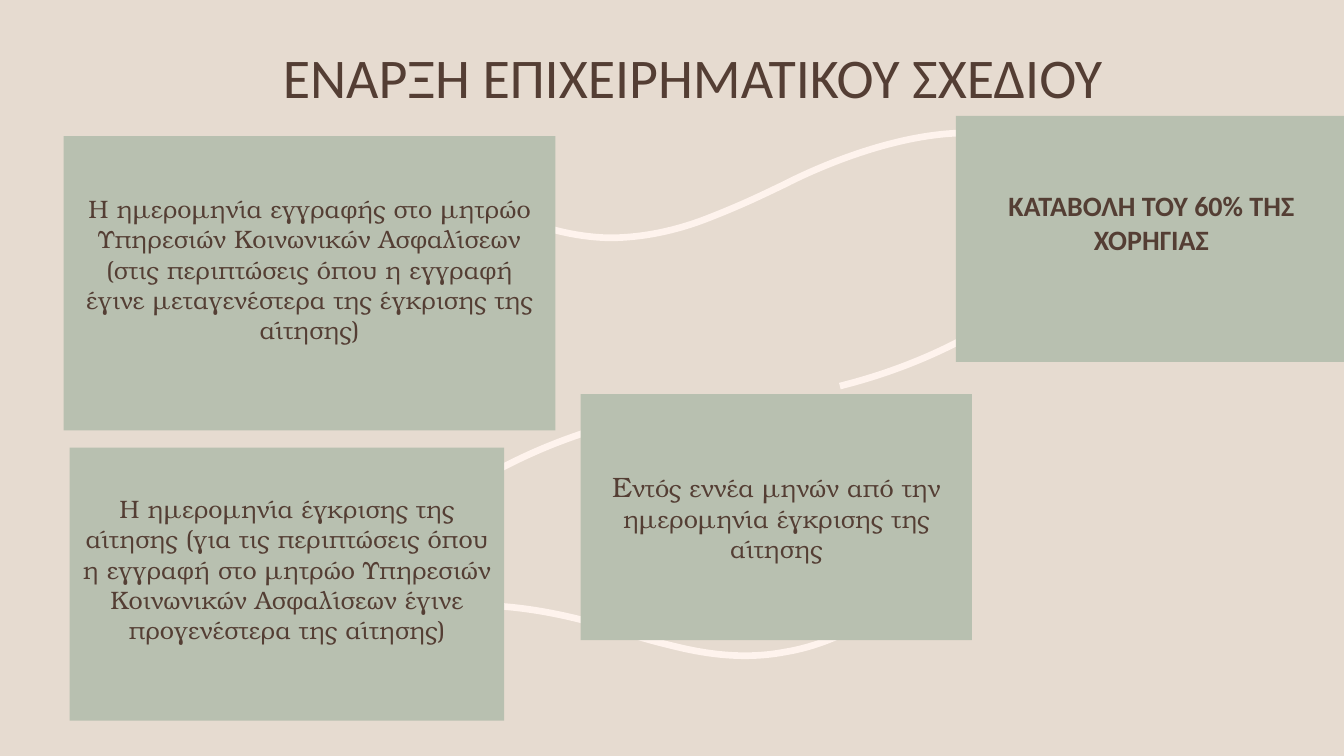
import pptx
import pptx.util
import pptx.dml.color
import pptx.enum.text
import pptx.oxml.ns
from lxml import etree

Inches = pptx.util.Inches
Pt = pptx.util.Pt
RGBColor = pptx.dml.color.RGBColor
ANCHOR = pptx.enum.text.MSO_ANCHOR
ALIGN = pptx.enum.text.PP_ALIGN
qn = pptx.oxml.ns.qn

SAND = RGBColor(0xE6, 0xDB, 0xD0)
SAGE = RGBColor(0xB8, 0xC0, 0xB0)
BROWN = RGBColor(0x54, 0x3E, 0x34)
CREAM = RGBColor(0xFE, 0xF3, 0xED)
SANS = "Calibri"
SERIF = "TeX Gyre Bonum"
COMPARISON_LAYOUT = 4

CURVES = [
    [(8.33, 3.83), (9.13, 3.63), (9.85, 3.27), (10.47, 2.75)],
    [(5.84, 4.28), (5.09, 4.52), (4.45, 4.9), (3.89, 5.39)],
    [(3.07, 2.23), (3.5, 1.87), (3.98, 1.77), (4.49, 1.9),
     (4.66, 1.94), (4.81, 2.01), (4.97, 2.09),
     (5.3, 2.24), (5.65, 2.35), (6.04, 2.36),
     (6.37, 2.36), (6.7, 2.29), (7.01, 2.17),
     (7.37, 2.03), (7.57, 1.93), (7.78, 1.83),
     (8.01, 1.71), (9.4, 1.03), (10.27, 1.46)],
    [(9.2, 5.79), (9.04, 5.86), (8.91, 5.95), (8.77, 6.05),
     (8.48, 6.25), (8.15, 6.41), (7.78, 6.47),
     (7.46, 6.53), (7.14, 6.51), (6.81, 6.44),
     (6.45, 6.36), (6.24, 6.29), (6.02, 6.22),
     (5.78, 6.15), (4.34, 5.7), (3.47, 6.36)],
]


def add_text(paragraph, text, font=SERIF, size=18, color=BROWN, bold=False):
    run = paragraph.add_run()
    run.text = text
    run.font.name = font
    run.font.size = Pt(size)
    run.font.color.rgb = color
    run.font.bold = bold


def bend_lines(shape):
    lines = list(shape._element.iter(qn("a:lnTo")))
    outline = lines[0].getparent()
    for start in range(0, len(lines), 3):
        bezier = etree.SubElement(outline, qn("a:cubicBezTo"))
        for line in lines[start:start + 3]:
            bezier.append(line[0])
            outline.remove(line)


class SlideBuilder:
    def __init__(self, presentation):
        layout = presentation.slide_layouts[COMPARISON_LAYOUT]
        self.slide = presentation.slides.add_slide(layout)
        self.slide.background.fill.solid()
        self.slide.background.fill.fore_color.rgb = SAND

    def place(self, index, left, top, width, height, anchor, bottom_inset=0.05):
        shape = self.slide.placeholders[index]
        shape.left, shape.top = Inches(left), Inches(top)
        shape.width, shape.height = Inches(width), Inches(height)
        frame = shape.text_frame
        frame.word_wrap = True
        frame.auto_size = pptx.enum.text.MSO_AUTO_SIZE.NONE
        frame.vertical_anchor = anchor
        frame.margin_left = frame.margin_right = Inches(0.1)
        frame.margin_top = Inches(0.05)
        frame.margin_bottom = Inches(bottom_inset)
        paragraph = frame.paragraphs[0]
        paragraph.alignment = ALIGN.CENTER
        paragraph.space_before = Pt(0)
        return shape, paragraph

    def title(self, text, *bounds):
        shape, paragraph = self.place(0, *bounds, ANCHOR.BOTTOM)
        paragraph.line_spacing = 0.9
        add_text(paragraph, text, font=SANS, size=40)

    def card(self, index, bounds, bottom_inset, runs):
        shape, paragraph = self.place(index, *bounds, ANCHOR.MIDDLE, bottom_inset)
        shape.fill.solid()
        shape.fill.fore_color.rgb = SAGE
        properties = paragraph._p.get_or_add_pPr()
        properties.set("marL", "0")
        properties.set("indent", "0")
        etree.SubElement(properties, qn("a:buNone"))
        for text, style in runs:
            add_text(paragraph, text, **style)

    def curve(self, controls):
        points = [(Inches(x), Inches(y)) for x, y in controls]
        builder = self.slide.shapes.build_freeform(*points[0])
        builder.add_line_segments(points[1:], close=False)
        shape = builder.convert_to_shape()
        bend_lines(shape)
        shape.shadow.inherit = False
        shape.fill.background()
        shape.line.color.rgb = CREAM
        shape.line.width = Pt(4.75)
        return shape

    def curves_behind(self, curves):
        for position, controls in enumerate(curves, start=2):
            self.slide.shapes._spTree.insert(position, self.curve(controls)._element)


def main():
    presentation = pptx.Presentation()
    presentation.slide_width = Inches(13.33)
    presentation.slide_height = Inches(7.5)
    builder = SlideBuilder(presentation)
    builder.title("ΕΝΑΡΞΗ ΕΠΙΧΕΙΡΗΜΑΤΙΚΟΥ ΣΧΕΔΙΟΥ", 0.63, 0.09, 12.48, 1.06)
    builder.card(1, (0.63, 1.35, 4.88, 2.92), 0.33, [
        ("Η ημερομηνία εγγραφής στο μητρώο Υπηρεσιών Κοινωνικών Ασφαλίσεων "
         "(στις περιπτώσεις όπου η εγγραφή έγινε μεταγενέστερα της έγκρισης "
         "της αίτησης)", {})])
    builder.card(2, (5.76, 3.91, 3.88, 2.44), 0.06, [
        ("Ε", {"size": 20}),
        ("ντός εννέα μηνών από την ημερομηνία έγκρισης της αίτησης", {})])
    builder.card(3, (0.69, 4.44, 4.31, 2.71), 0.35, [
        ("Η ημερομηνία έγκρισης της αίτησης (για τις περιπτώσεις όπου η εγγραφή "
         "στο μητρώο Υπηρεσιών Κοινωνικών Ασφαλίσεων έγινε προγενέστερα "
         "της αίτησης)", {})])
    builder.card(4, (9.48, 1.15, 3.88, 2.44), 0.38, [
        ("ΚΑΤΑΒΟΛΗ ΤΟΥ 60% ΤΗΣ ΧΟΡΗΓΙΑΣ",
         {"font": SANS, "size": 20, "bold": True})])
    builder.curves_behind(CURVES)
    presentation.save("out.pptx")


if __name__ == "__main__":
    main()
